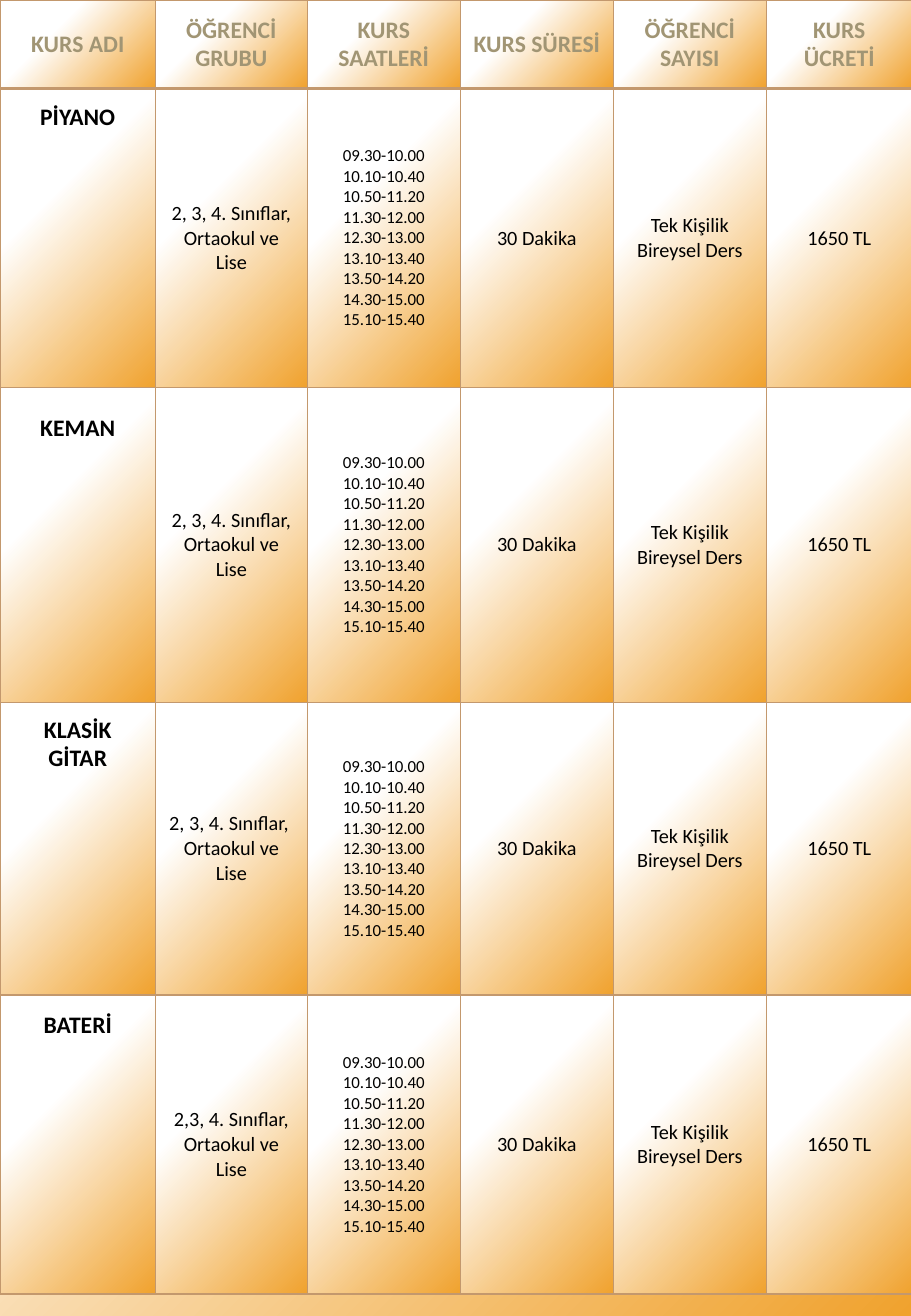
"""Build a one-slide price and timetable sheet for music courses."""
from dataclasses import dataclass

from pptx import Presentation
from pptx.dml.color import RGBColor
from pptx.enum.text import MSO_ANCHOR, PP_ALIGN
from pptx.oxml import parse_xml
from pptx.oxml.ns import nsdecls
from pptx.util import Inches, Pt

CENTER = PP_ALIGN.CENTER
MIDDLE, TOP = MSO_ANCHOR.MIDDLE, MSO_ANCHOR.TOP


@dataclass(frozen=True)
class Theme:
    font: str = "Calibri"
    heading: str = "A19574"
    ink: str = "000000"
    border: str = "C3986D"
    glow_start: str = "FFFFFF"
    glow_end: str = "F0A22E"
    title_size: int = 14
    body_size: int = 12
    hours_size: int = 10
    thin: int = 1
    thick: int = 2


COLUMN_WIDTHS = [1.28, 1.25, 1.26, 1.26, 1.26, 1.2]
ROW_HEIGHTS = [0.73, 2.46, 2.59, 2.41, 2.46]
HEADINGS = ["KURS ADI", "ÖĞRENCİ GRUBU", "KURS SAATLERİ",
            "KURS SÜRESİ", "ÖĞRENCİ SAYISI", "KURS ÜCRETİ"]
HOURS = ["09.30-10.00", "10.10-10.40", "10.50-11.20", "11.30-12.00", "12.30-13.00",
         "13.10-13.40", "13.50-14.20", "14.30-15.00", "15.10-15.40"]
STUDENTS = ["2, 3, 4. Sınıflar, Ortaokul ve Lise"]
COURSES = [
    ("PİYANO", 0.12, STUDENTS),
    ("KEMAN", 0.22, STUDENTS),
    ("KLASİK GİTAR", 0.11, ["2, 3, 4. Sınıflar, ", "Ortaokul ve Lise"]),
    ("BATERİ", 0.13, ["2,3, 4. Sınıflar, Ortaokul ve Lise"]),
]


def write_text(text_frame, lines, *, font, size, color, bold=False):
    for index, line in enumerate(lines):
        paragraph = text_frame.paragraphs[0] if index == 0 else text_frame.add_paragraph()
        paragraph.alignment = CENTER
        run = paragraph.add_run()
        run.text = line
        run.font.name = font
        run.font.size = Pt(size)
        run.font.bold = bold
        run.font.color.rgb = RGBColor.from_string(color)


class SlideBuilder:
    def __init__(self, slide, theme):
        self.slide = slide
        self.theme = theme

    def gradient(self):
        stops = [(0, self.theme.glow_start), (35, self.theme.glow_start),
                 (100, self.theme.glow_end)]
        stop_xml = "".join(
            f'<a:gs pos="{position * 1000}"><a:srgbClr val="{color}"/></a:gs>'
            for position, color in stops)
        return (f'<a:gradFill {nsdecls("a")} rotWithShape="1"><a:gsLst>{stop_xml}</a:gsLst>'
                '<a:path path="circle"><a:fillToRect r="100000" b="100000"/></a:path>'
                '</a:gradFill>')

    def background(self):
        self.slide.element.cSld.insert(0, parse_xml(
            f'<p:bg {nsdecls("p", "a")}><p:bgPr>{self.gradient()}'
            '<a:effectLst/></p:bgPr></p:bg>'))

    def table(self, left, top, column_widths, row_heights):
        frame = self.slide.shapes.add_table(
            len(row_heights), len(column_widths), Inches(left), Inches(top),
            Inches(sum(column_widths)), Inches(sum(row_heights)))
        table = frame.table
        table.first_row = table.horz_banding = False
        for column, width in zip(table.columns, column_widths):
            column.width = Inches(width)
        for row, height in zip(table.rows, row_heights):
            row.height = Inches(height)
        return table

    def cell(self, cell, lines, *, size, color=None, bold=False, anchor=MIDDLE,
             margin_top=0.05, top_line=None, bottom_line=None):
        theme = self.theme
        cell.vertical_anchor = anchor
        cell.margin_top = Inches(margin_top)
        write_text(cell.text_frame, lines, font=theme.font, size=size,
                   color=color or theme.ink, bold=bold)
        properties = cell._tc.get_or_add_tcPr()
        lines_by_side = {"L": theme.thin, "R": theme.thin,
                         "T": top_line or theme.thin, "B": bottom_line or theme.thin}
        for side, width in lines_by_side.items():
            properties.append(parse_xml(
                f'<a:ln{side} {nsdecls("a")} w="{Pt(width)}"><a:solidFill>'
                f'<a:srgbClr val="{theme.border}"/></a:solidFill></a:ln{side}>'))
        properties.append(parse_xml(self.gradient()))


def main():
    theme = Theme()
    presentation = Presentation()
    presentation.slide_width = Inches(7.5)
    presentation.slide_height = Inches(10.83)
    slide = presentation.slides.add_slide(presentation.slide_layouts[6])
    builder = SlideBuilder(slide, theme)
    builder.background()
    table = builder.table(0, 0, COLUMN_WIDTHS, ROW_HEIGHTS)

    for column, heading in enumerate(HEADINGS):
        builder.cell(table.cell(0, column), [heading], size=theme.title_size,
                     color=theme.heading, bold=True, bottom_line=theme.thick)

    for row, (name, name_offset, students) in enumerate(COURSES, start=1):
        top_line = theme.thick if row == 1 else theme.thin
        builder.cell(table.cell(row, 0), [name], size=theme.title_size, bold=True,
                     anchor=TOP, margin_top=name_offset, top_line=top_line)
        details = [(students, theme.body_size), (HOURS, theme.hours_size),
                   (["30 Dakika"], theme.body_size),
                   (["Tek Kişilik Bireysel Ders"], theme.body_size),
                   (["1650 TL"], theme.body_size)]
        for column, (lines, size) in enumerate(details, start=1):
            builder.cell(table.cell(row, column), lines, size=size, top_line=top_line)

    presentation.save("out.pptx")


if __name__ == "__main__":
    main()
